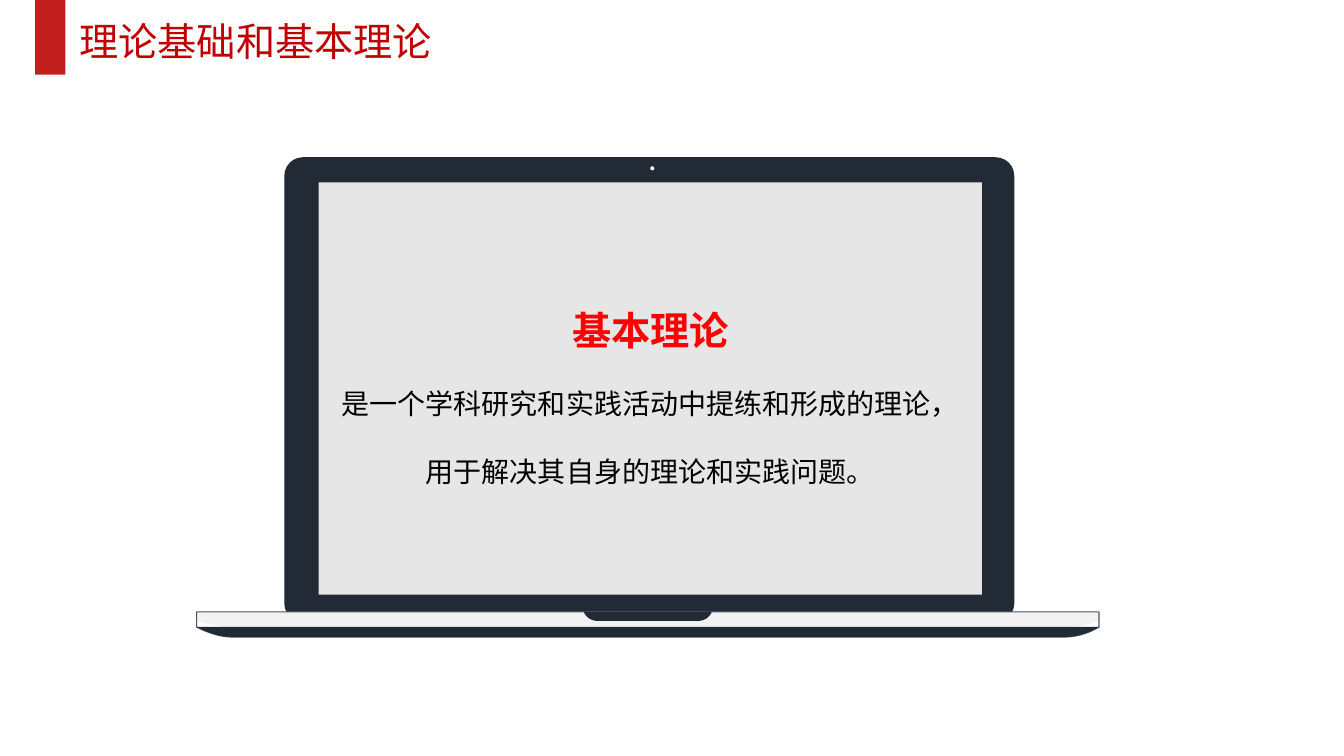
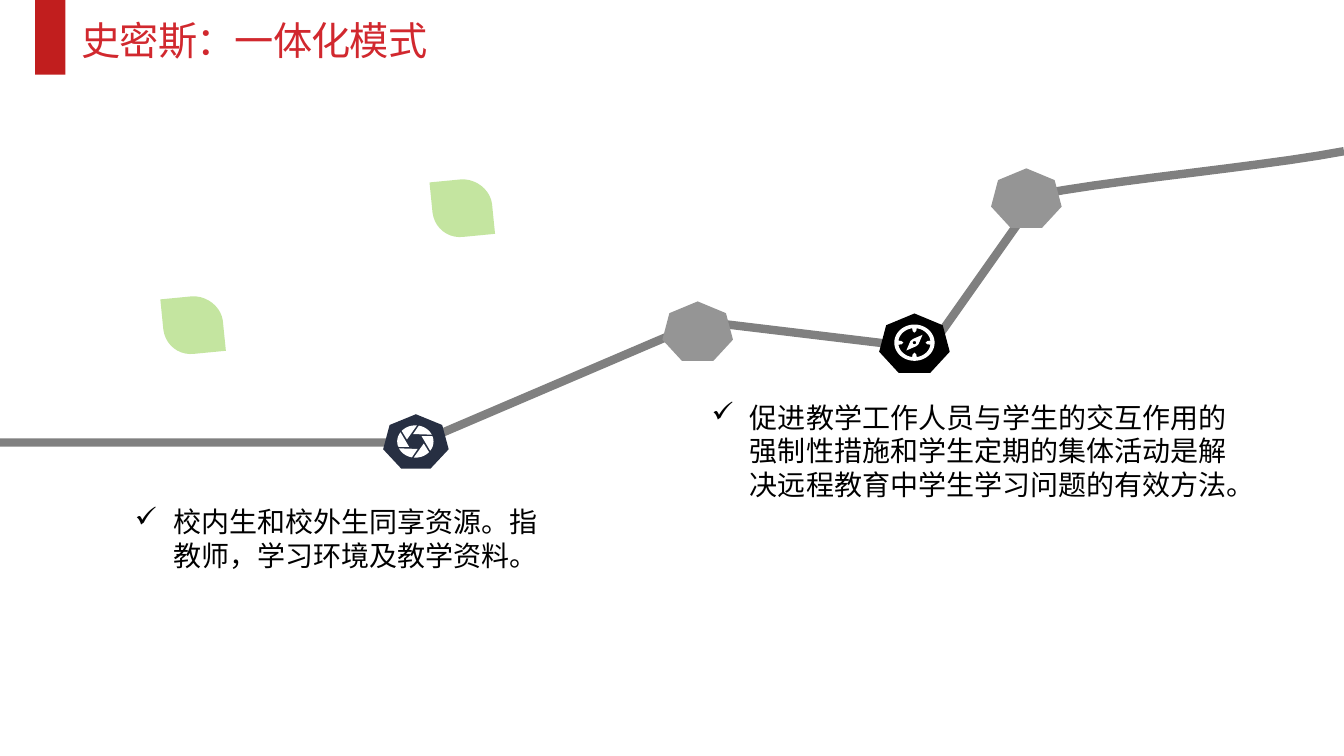
import math
from typing import NamedTuple

import lxml.etree
import pptx
import pptx.dml.color
import pptx.enum.shapes
import pptx.enum.text
import pptx.oxml.ns
import pptx.util

Inches = pptx.util.Inches
Pt = pptx.util.Pt
qn = pptx.oxml.ns.qn
MSO = pptx.enum.shapes.MSO_SHAPE
ALIGN = pptx.enum.text.PP_ALIGN
ANCHOR = pptx.enum.text.MSO_ANCHOR

FONT = "Noto Sans CJK SC"
RED_BAR = "C11E1E"
DARK = "222A35"
WHITE = "FFFFFF"
BLACK = "000000"
GREY = "959595"
ROAD = "808080"
LEAF = "92D050"


class Box(NamedTuple):
    x: float
    y: float
    w: float
    h: float


class Marker(NamedTuple):
    box: Box
    color: str


class Note(NamedTuple):
    box: Box
    text: str


class Dial(NamedTuple):
    cx: float
    cy: float
    rx: float
    ry: float

    def at(self, degrees, radius=1.0):
        a = math.radians(degrees)
        return self.point(radius * math.cos(a), radius * math.sin(a))

    def point(self, u, v):
        return self.cx + self.rx * u, self.cy + self.ry * v

    def arc(self, start, end, radius=1.0, steps=12):
        return [self.at(start + (end - start) * i / steps, radius) for i in range(steps + 1)]


MARKERS = [
    Marker(Box(3.8, 4.11, 0.65, 0.54), "272F42"),
    Marker(Box(9.83, 1.67, 0.7, 0.59), GREY),
    Marker(Box(6.57, 2.99, 0.7, 0.59), GREY),
    Marker(Box(8.72, 3.11, 0.7, 0.59), BLACK),
]
NOTES = [
    Note(Box(1.24, 4.96, 4.33, 0.77), "校内生和校外生同享资源。指教师，学习环境及教学资料。"),
    Note(Box(6.96, 3.92, 5.47, 1.11),
         "促进教学工作人员与学生的交互作用的强制性措施和学生定期的集体活动是解决远程教育中学生学习问题的有效方法。"),
]
LEAVES = [(1.59, 2.94), (4.26, 1.78)]


def rgb(color: str):
    return pptx.dml.color.RGBColor.from_string(color)


def paint(sp, fill=None, line=None, width=1.0, alpha=None):
    sp.shadow.inherit = False
    if fill:
        sp.fill.solid()
        sp.fill.fore_color.rgb = rgb(fill)
        if alpha is not None:
            clr = sp.fill._xPr.find(".//" + qn("a:srgbClr"))
            lxml.etree.SubElement(clr, qn("a:alpha")).set("val", str(alpha * 1000))
    else:
        sp.fill.background()
    if line:
        sp.line.color.rgb = rgb(line)
        sp.line.width = Pt(width)
    else:
        sp.line.fill.background()
    return sp


def add_preset(s, kind, box: Box, fill: str):
    return paint(s.shapes.add_shape(kind, *map(Inches, box)), fill)


def flatten(steps, samples=10):
    points = [steps[0]]
    for step in steps[1:]:
        if len(step) == 2:
            points.append(step)
            continue
        ends = [points[-1], step[:2], step[2:4], step[4:]]
        for i in range(1, samples + 1):
            t = i / samples
            weights = [(1 - t) ** 3, 3 * t * (1 - t) ** 2, 3 * t * t * (1 - t), t ** 3]
            points.append(tuple(sum(w * e[k] for w, e in zip(weights, ends)) for k in (0, 1)))
    return points


def add_outline(s, contours, closed=True, **style):
    builder = None
    for steps in contours:
        points = [(Inches(x), Inches(y)) for x, y in flatten(steps)]
        if builder is None:
            builder = s.shapes.build_freeform(*points[0], scale=1.0)
        else:
            builder.move_to(*points[0])
        builder.add_line_segments(points[1:], close=closed)
    return paint(builder.convert_to_shape(), **style)


def add_paragraph(tf, text: str, first=True, size=20, color=BLACK, bold=False,
                  align=ALIGN.LEFT, spacing=None, kerning=None, bullet=None):
    p = tf.paragraphs[0] if first else tf.add_paragraph()
    p.alignment = align
    if spacing:
        p.line_spacing = spacing
    if bullet:
        pPr = p._p.get_or_add_pPr()
        pPr.set("marL", str(Inches(0.38)))
        pPr.set("indent", str(-Inches(0.38)))
        lxml.etree.SubElement(pPr, qn("a:buChar")).set("char", bullet)
    r = p.add_run()
    r.text = text
    r.font.size = Pt(size)
    r.font.bold = bold
    r.font.color.rgb = rgb(color)
    r.font.name = FONT
    rPr = r._r.get_or_add_rPr()
    lxml.etree.SubElement(rPr, qn("a:ea")).set("typeface", FONT)
    if kerning is not None:
        rPr.set("spc", str(kerning))


def add_text(s, box: Box, text: str, wrap=True, **style):
    tf = s.shapes.add_textbox(*map(Inches, box)).text_frame
    tf.word_wrap = wrap
    add_paragraph(tf, text, **style)


def new_slide(prs, title: str, box: Box, **style):
    s = prs.slides.add_slide(prs.slide_layouts[6])
    add_preset(s, MSO.RECTANGLE, Box(0.35, 0, 0.3, 0.74), RED_BAR)
    add_text(s, box, title, wrap=False, size=28, **style)
    return s


def draw_laptop(s):
    left, right, top, lip, bottom = 1.95, 10.9, 6.07, 6.22, 6.32
    lid = add_preset(s, MSO.ROUNDED_RECTANGLE, Box(2.82, 1.56, 7.24, 4.61), DARK)
    lid.adjustments[0] = 0.04

    def base(edge, low):
        return [(right, edge), (right, edge, 10.75, low, 10.56, low), (2.3, low),
                (2.13, low, left, edge, left, edge)]

    deck = [(left, top), (right, top)]
    add_outline(s, [base(6.16, lip) + deck], fill="F2F2F2")
    add_outline(s, [base(lip, bottom) + deck], line="44546A", width=0.79)
    add_outline(s, [base(lip, bottom)], fill=DARK)
    add_outline(s, [[(5.79, top), (5.81, 6.12, 5.86, 6.16, 5.93, 6.16), (6.92, 6.16),
                     (6.99, 6.16, 7.04, 6.12, 7.06, top)]], fill=DARK)
    add_preset(s, MSO.OVAL, Box(6.45, 1.65, 0.04, 0.04), WHITE)

    tf = add_preset(s, MSO.RECTANGLE, Box(3.16, 1.81, 6.58, 4.09), "E7E6E6").text_frame
    tf.word_wrap = True
    tf.vertical_anchor = ANCHOR.MIDDLE
    tf.margin_bottom = Inches(0.35)
    add_paragraph(tf, "基本理论", size=28, color="FF0000", bold=True,
                  align=ALIGN.CENTER, spacing=2.0)
    add_paragraph(tf, "是一个学科研究和实践活动中提练和形成的理论，用于解决其自身的理论和实践问题。",
                  first=False, align=ALIGN.CENTER, spacing=2.0)


def draw_aperture(s):
    dial = Dial(4.12, 4.38, 0.18, 0.16)
    blades = [dial.arc(a, a - 54) + [dial.at(a - 80, 0.48)] for a in range(-85, 275, 60)]
    add_outline(s, blades, fill=WHITE)


def draw_compass(s):
    dial = Dial(9.07, 3.4, 0.2, 0.18)
    inner = []
    for a in range(0, 360, 90):
        inner += dial.arc(a + 8, a + 82, 0.8)
        inner += [dial.at(a + 82, 0.65), dial.at(a + 90, 0.55), dial.at(a + 98, 0.65)]
    needle = [dial.point(u, v) for u, v in [(-0.08, -0.2), (0.4, -0.43), (0.2, 0.09),
                                            (0.08, 0.2), (-0.4, 0.43), (-0.2, -0.09)]]
    add_outline(s, [dial.arc(0, 360, steps=48), inner, needle, dial.arc(0, 360, 0.09)],
                fill=WHITE)


def draw_leaf(s, x: float, y: float):
    steps = [(0.03, 0.33), (0, 0.03), (0.31, 0), (0.46, -0.01, 0.6, 0.1, 0.62, 0.24),
             (0.65, 0.54), (0.34, 0.57), (0.18, 0.59, 0.05, 0.48, 0.03, 0.33)]
    moved = [tuple(v + (y if i % 2 else x) for i, v in enumerate(step)) for step in steps]
    add_outline(s, [moved], fill=LEAF, alpha=54)


def draw_road(s):
    add_outline(s, [[(0, 4.39), (4.16, 4.39), (6.97, 3.19), (9.22, 3.46), (10.3, 1.93),
                     (11.08, 1.78, 12.55, 1.65, 13.33, 1.5)]],
                closed=False, line=ROAD, width=6)
    for marker in MARKERS:
        add_preset(s, MSO.HEPTAGON, marker.box, marker.color)
    draw_aperture(s)
    draw_compass(s)


def main():
    prs = pptx.Presentation()
    prs.slide_width, prs.slide_height = Inches(13.33), Inches(7.5)

    s = new_slide(prs, "理论基础和基本理论", Box(0.69, 0.12, 3.74, 0.57), color="C00000")
    draw_laptop(s)

    s = new_slide(prs, "史密斯：一体化模式", Box(0.71, 0.11, 3.66, 0.57),
                  color="D1282E", kerning=-60)
    draw_road(s)
    for note in NOTES:
        add_text(s, note.box, note.text, bullet="✓")
    for x, y in LEAVES:
        draw_leaf(s, x, y)

    prs.save("out.pptx")


if __name__ == "__main__":
    main()
